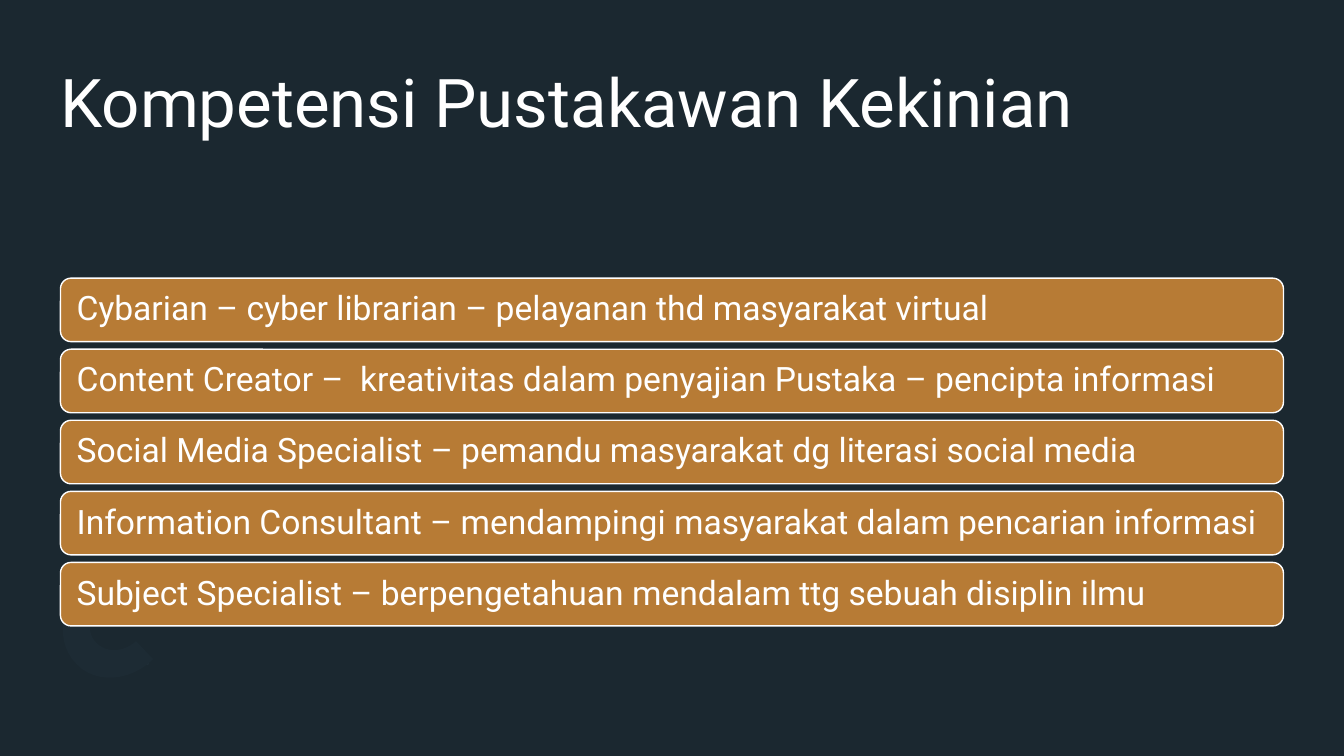
from pptx import Presentation
from pptx.dml.color import RGBColor
from pptx.enum.shapes import MSO_SHAPE
from pptx.enum.text import MSO_ANCHOR, PP_ALIGN
from pptx.util import Inches, Pt

TITLE = "Kompetensi Pustakawan Kekinian"
COMPETENCIES = [
    "Cybarian – cyber librarian – pelayanan thd masyarakat virtual",
    "Content Creator –  kreativitas dalam penyajian Pustaka – pencipta informasi",
    "Social Media Specialist – pemandu masyarakat dg literasi social media",
    "Information Consultant – mendampingi masyarakat dalam pencarian informasi",
    "Subject Specialist – berpengetahuan mendalam ttg sebuah disiplin ilmu",
]
COLORS = {"background": "1B2830", "bar": "B77B35", "text": "FFFFFF",
          "ellipse": "2B3F4C", "arc": "1D2B34"}
FONT = "Roboto"
LEFT, WIDTH = 0.6, 12.13
BAR_TOP, BAR_HEIGHT, BAR_PITCH = 2.76, 0.63, 0.705
TEXT_INSET = 0.13

# Each curve: start, two control points, end
ARC_CURVES = [
    [(0.76, 6.59), (0.56, 6.39), (0.58, 6.05), (0.81, 5.82)],
    [(0.99, 6.0), (0.87, 6.11), (0.86, 6.29), (0.96, 6.38)],
    [(0.96, 6.38), (1.06, 6.48), (1.23, 6.47), (1.35, 6.36)],
    [(1.52, 6.54), (1.3, 6.76), (0.95, 6.79), (0.76, 6.59)],
]
CURVE_STEPS = 12


def color(name):
    return RGBColor.from_string(COLORS[name])


def paint(shape, fill, line=None):
    shape.shadow.inherit = False
    shape.fill.solid()
    shape.fill.fore_color.rgb = color(fill)
    if line:
        shape.line.color.rgb = color(line)
        shape.line.width = Pt(1)
    else:
        shape.line.fill.background()


def write(shape, text, size, inset, anchor, spacing):
    frame = shape.text_frame
    frame_format = {"word_wrap": True, "vertical_anchor": anchor,
                    "margin_left": Inches(inset), "margin_right": Inches(inset),
                    "margin_top": 0, "margin_bottom": 0}
    for name, value in frame_format.items():
        setattr(frame, name, value)
    paragraph = frame.paragraphs[0]
    paragraph.alignment = PP_ALIGN.LEFT
    paragraph.line_spacing = spacing
    run = paragraph.add_run()
    run.text = text
    for name, value in {"name": FONT, "size": Pt(size)}.items():
        setattr(run.font, name, value)
    run.font.color.rgb = color("text")


def curve_points(curve):
    """Sample a cubic Bezier curve."""
    for step in range(CURVE_STEPS + 1):
        t = step / CURVE_STEPS
        weights = ((1 - t) ** 3, 3 * t * (1 - t) ** 2, 3 * t ** 2 * (1 - t), t ** 3)
        yield tuple(Inches(sum(w * point[axis] for w, point in zip(weights, curve)))
                    for axis in (0, 1))


def add_decoration(slide):
    ellipse = slide.shapes.add_shape(
        MSO_SHAPE.OVAL, Inches(1.35), Inches(6.37), Inches(0.06), Inches(0.26))
    ellipse.rotation = 135
    paint(ellipse, "ellipse")
    points = [point for curve in ARC_CURVES for point in curve_points(curve)]
    builder = slide.shapes.build_freeform(*points[0])
    builder.add_line_segments(points[1:], close=True)
    paint(builder.convert_to_shape(), "arc")


def main():
    presentation = Presentation()
    presentation.slide_width = Inches(13.33)
    presentation.slide_height = Inches(7.5)
    slide = presentation.slides.add_slide(presentation.slide_layouts[6])
    slide.background.fill.solid()
    slide.background.fill.fore_color.rgb = color("background")

    add_decoration(slide)
    title = slide.shapes.add_textbox(
        Inches(LEFT), Inches(0.6), Inches(WIDTH), Inches(1.46))
    write(title, TITLE, 48, 0, MSO_ANCHOR.TOP, 1.0)

    for row, competency in enumerate(COMPETENCIES):
        bar = slide.shapes.add_shape(
            MSO_SHAPE.ROUNDED_RECTANGLE, Inches(LEFT),
            Inches(BAR_TOP + row * BAR_PITCH), Inches(WIDTH), Inches(BAR_HEIGHT))
        paint(bar, "bar", "text")
        write(bar, competency, 24, TEXT_INSET, MSO_ANCHOR.MIDDLE, 0.9)

    presentation.save("out.pptx")


if __name__ == "__main__":
    main()
